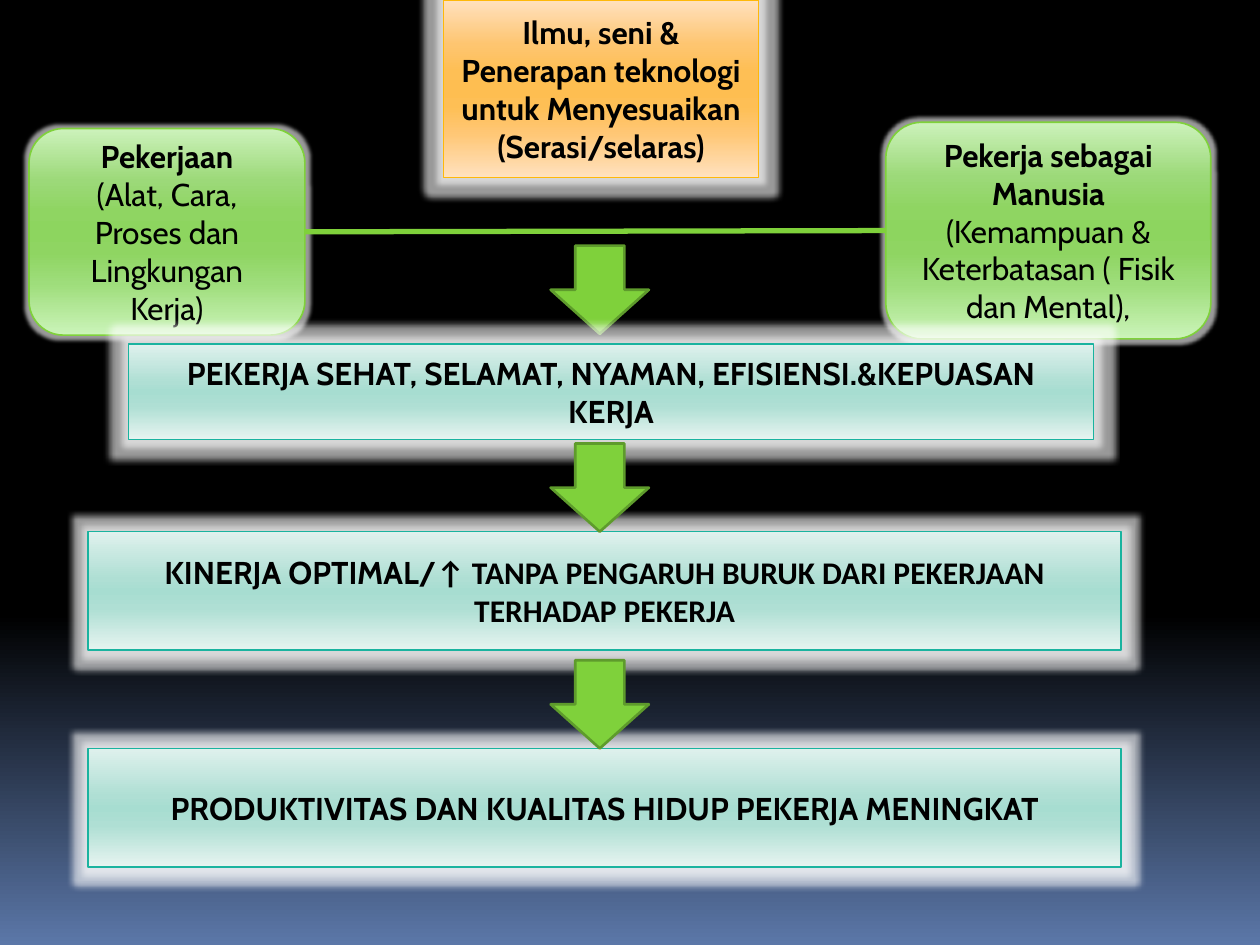
import dataclasses

import lxml.etree
import pptx
import pptx.dml.color
import pptx.enum.shapes
import pptx.enum.text
import pptx.oxml.ns
import pptx.util

Inches = pptx.util.Inches
Pt = pptx.util.Pt
Shapes = pptx.enum.shapes.MSO_SHAPE


@dataclasses.dataclass(frozen=True)
class Theme:
    font: str = "Cabin"
    second_font: str = "Calibri"
    text_size: float = 18
    text: str = "000000"
    glow: str = "FFFFFF"
    glow_opacity: int = 60
    box_line: float = 0.94
    link_line: float = 3
    arrow_line: float = 1.5
    green: str = "7FD13B"
    dark_green: str = "5E9B2C"
    orange: str = "FEB80A"
    teal: str = "1AB39F"
    background: tuple = ((0, "000000"), (65, "000000"), (100, "5B77A8"))
    orange_stops: tuple = (
        (0, "FFE1BF"), (25, "FEC570"), (40, "FEBF55"), (50, "FEBE51"),
        (60, "FEBF55"), (75, "FFC775"), (100, "FFE1BF"))
    green_stops: tuple = (
        (0, "CCF2BB"), (25, "9CD979"), (40, "8FD562"), (50, "8DD55F"),
        (60, "8FD562"), (75, "9EDD7B"), (100, "CBF4B9"))
    teal_stops: tuple = (
        (0, "DFF1ED"), (40, "AFDFD4"), (50, "A7DDD1"), (65, "AFDFD4"),
        (100, "E6F4F0"))


THEME = Theme()


def rgb(color):
    return pptx.dml.color.RGBColor.from_string(color)


def add_child(parent, tag, **attributes):
    child = lxml.etree.SubElement(parent, pptx.oxml.ns.qn(tag))
    for name, value in attributes.items():
        child.set(name, str(value))
    return child


def set_gradient(fill, element, stops):
    fill.gradient()
    fill.gradient_angle = 270
    stop_list = next(element.iter(pptx.oxml.ns.qn("a:gsLst")))
    for stop in list(stop_list):
        stop_list.remove(stop)
    for position, color in stops:
        stop = add_child(stop_list, "a:gs", pos=position * 1000)
        add_child(stop, "a:srgbClr", val=color)


def set_line(line, color, width):
    line.color.rgb = rgb(color)
    line.width = Pt(width)


def set_glow(shape, radius):
    shape.shadow.inherit = False
    effects = shape._element.spPr.find(pptx.oxml.ns.qn("a:effectLst"))
    glow = add_child(effects, "a:glow", rad=Inches(radius))
    color = add_child(glow, "a:srgbClr", val=THEME.glow)
    add_child(color, "a:alpha", val=THEME.glow_opacity * 1000)


def format_run(run, bold=True, font=THEME.font):
    run.font.name = font
    run.font.size = Pt(THEME.text_size)
    run.font.bold = bold
    run.font.color.rgb = rgb(THEME.text)


def add_box(slide, kind, position, stops, line_color, text, glow_radius):
    shape = slide.shapes.add_shape(kind, *map(Inches, position))
    set_gradient(shape.fill, shape._element, stops)
    set_line(shape.line, line_color, THEME.box_line)
    set_glow(shape, glow_radius)
    frame = shape.text_frame
    frame.text = text
    frame.word_wrap = True
    frame.vertical_anchor = pptx.enum.text.MSO_ANCHOR.MIDDLE
    for index, paragraph in enumerate(frame.paragraphs):
        paragraph.alignment = pptx.enum.text.PP_ALIGN.CENTER
        for run in paragraph.runs:
            format_run(run, bold=index == 0)
    return shape


def add_side_box(slide, position, text):
    return add_box(slide, Shapes.ROUNDED_RECTANGLE, position,
                   THEME.green_stops, THEME.green, text, 0.06)


def add_result_bar(slide, position, text):
    return add_box(slide, Shapes.RECTANGLE, position,
                   THEME.teal_stops, THEME.teal, text, 0.1)


def add_down_arrow(slide, top):
    arrow = slide.shapes.add_shape(
        Shapes.RIGHT_ARROW, Inches(4.41), Inches(top), Inches(0.7), Inches(0.78))
    arrow.rotation = 90
    arrow.shadow.inherit = False
    arrow.fill.solid()
    arrow.fill.fore_color.rgb = rgb(THEME.green)
    set_line(arrow.line, THEME.dark_green, THEME.arrow_line)


def add_link(slide, left_box, right_box):
    link = slide.shapes.add_connector(
        pptx.enum.shapes.MSO_CONNECTOR.STRAIGHT, 0, 0, 0, 0)
    link.begin_connect(left_box, 3)
    link.end_connect(right_box, 1)
    set_line(link.line, THEME.green, THEME.link_line)
    add_child(link._element.spPr, "a:effectLst")


def main():
    presentation = pptx.Presentation()
    presentation.slide_width = Inches(10)
    presentation.slide_height = Inches(7.5)
    slide = presentation.slides.add_slide(presentation.slide_layouts[6])
    set_gradient(slide.background.fill, slide._element, THEME.background)

    add_box(slide, Shapes.RECTANGLE, (3.52, 0, 2.5, 1.41),
            THEME.orange_stops, THEME.orange,
            "Ilmu, seni & Penerapan teknologi untuk Menyesuaikan (Serasi/selaras)",
            0.1)
    job = add_side_box(slide, (0.23, 1.02, 2.19, 1.64),
                       "Pekerjaan\n(Alat, Cara, Proses dan Lingkungan Kerja)")
    worker = add_side_box(
        slide, (7.03, 0.97, 2.58, 1.72),
        "Pekerja sebagai Manusia\n(Kemampuan & Keterbatasan ( Fisik dan Mental),")
    add_link(slide, job, worker)

    add_down_arrow(slide, 1.91)
    add_result_bar(slide, (1.02, 2.73, 7.66, 0.76),
                   "PEKERJA SEHAT, SELAMAT, NYAMAN, EFISIENSI.&KEPUASAN KERJA")
    performance = add_result_bar(slide, (0.7, 4.22, 8.2, 0.94), "KINERJA OPTIMAL/")
    effect = performance.text_frame.paragraphs[0].add_run()
    effect.text = "↑ TANPA PENGARUH BURUK DARI PEKERJAAN TERHADAP PEKERJA"
    format_run(effect, font=THEME.second_font)
    add_down_arrow(slide, 3.48)
    add_result_bar(slide, (0.7, 5.94, 8.2, 0.94),
                   "PRODUKTIVITAS DAN KUALITAS HIDUP PEKERJA MENINGKAT")
    add_down_arrow(slide, 5.2)

    presentation.save("out.pptx")


if __name__ == "__main__":
    main()
